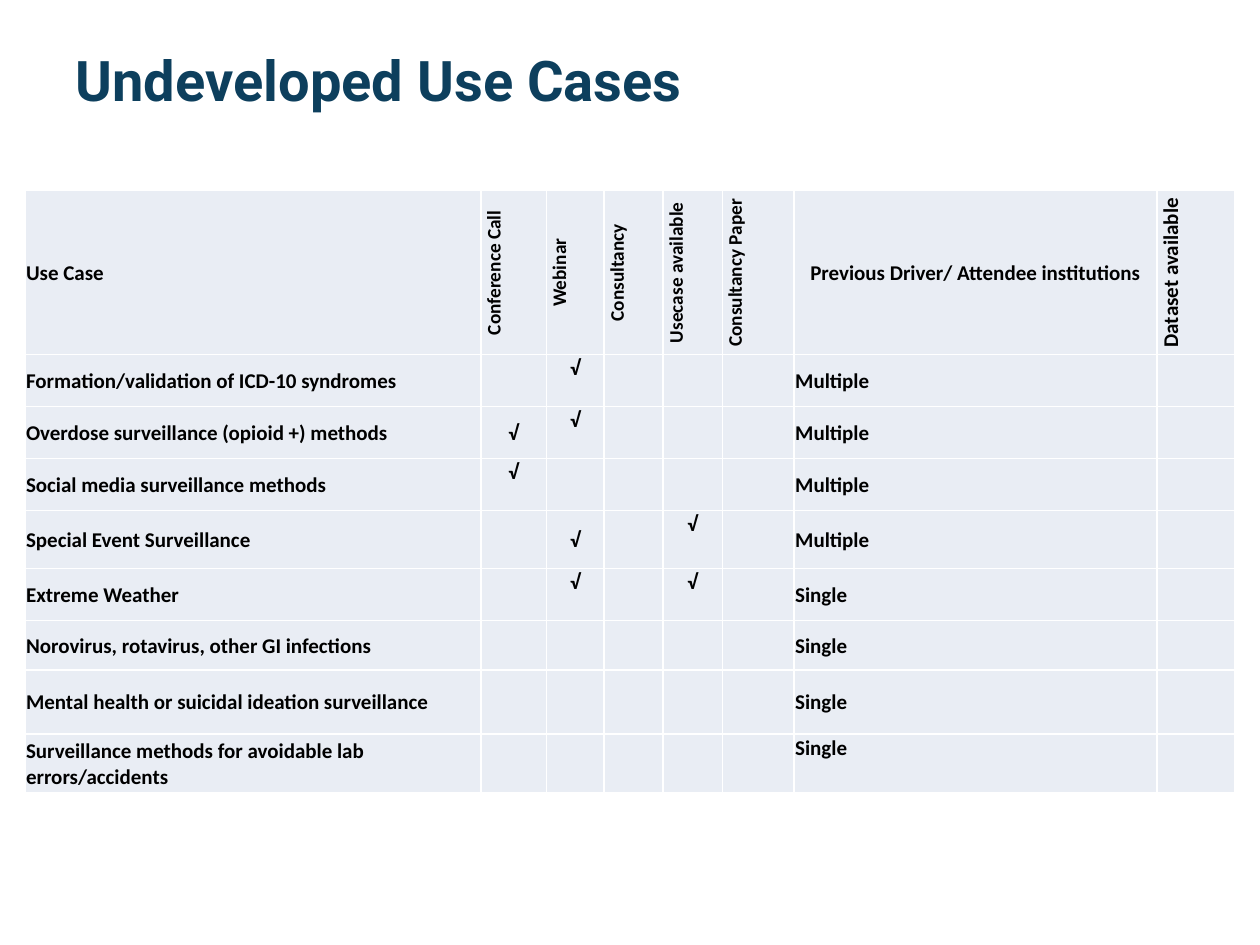
from lxml.etree import SubElement as Sub
from pptx import Presentation
from pptx.dml.color import RGBColor as RGB
from pptx.enum.text import MSO_ANCHOR as Anchor, PP_ALIGN as Align
from pptx.oxml.ns import qn
from pptx.util import Pt

HUES = {"title": "0D3F5D", "text": "000000", "cell": "E9EDF4", "edge": "FFFFFF"}
WIDTHS = [260.6, 37.4, 33.1, 33.7, 33.8, 41, 207.4, 44.6]
HEIGHTS = [93.7, 29.7, 29.7, 29.7, 33.1, 29.7, 28.5, 36.6, 33.7]
HEADS = ["Use Case", "Conference Call", "Webinar", "Consultancy", "Usecase available",
         "Consultancy Paper", "Previous Driver/ Attendee institutions", "Dataset available"]
CASES = [
    ("Formation/validation of ICD-10 syndromes", [2], "Multiple"),
    ("Overdose surveillance (opioid +) methods", [1, 2], "Multiple"),
    ("Social media surveillance methods", [1], "Multiple"),
    ("Special Event Surveillance", [2, 4], "Multiple"),
    ("Extreme Weather", [2, 4], "Single"),
    ("Norovirus, rotavirus, other GI infections", [], "Single"),
    ("Mental health or suicidal ideation surveillance", [], "Single"),
    ("Surveillance methods for avoidable lab errors/accidents", [], "Single"),
]
HIGH = {(1, 2), (2, 2), (3, 1), (4, 4), (5, 2), (5, 4), (8, 6)}


def write(para, text, face, size, hue):
    run = para.add_run()
    run.text = text
    run.font.name = face
    run.font.size = Pt(size)
    run.font.bold = True
    run.font.color.rgb = RGB.from_string(HUES[hue])


def dress(cell):
    props = cell._tc.get_or_add_tcPr()
    for side in ("lnL", "lnR", "lnT", "lnB"):
        line = Sub(props, qn(f"a:{side}"), w=str(Pt(1)))
        fill = Sub(line, qn("a:solidFill"))
        Sub(fill, qn("a:srgbClr"), val=HUES["edge"])
    cell.fill.solid()
    cell.fill.fore_color.rgb = RGB.from_string(HUES["cell"])
    cell.margin_left = cell.margin_right = cell.margin_top = Pt(0.7)
    cell.margin_bottom = Pt(0)
    cell.vertical_anchor = Anchor.MIDDLE


deck = Presentation()
deck.slide_width, deck.slide_height = Pt(720), Pt(540)
slide = deck.slides.add_slide(deck.slide_layouts[5])

title = slide.shapes.title
title.left, title.top, title.width, title.height = Pt(36), Pt(0), Pt(524), Pt(90)
title.text_frame.vertical_anchor = Anchor.MIDDLE
para = title.text_frame.paragraphs[0]
para.alignment = Align.LEFT
write(para, "Undeveloped Use Cases", "Roboto", 32, "title")

grid = [HEADS]
for case, ticks, source in CASES:
    marks = ["√" if col in ticks else "" for col in range(1, 6)]
    grid.append([case, *marks, source, ""])

table = slide.shapes.add_table(len(grid), len(HEADS), Pt(14.2), Pt(109),
                               Pt(sum(WIDTHS)), Pt(sum(HEIGHTS))).table
for col, width in zip(table.columns, WIDTHS):
    col.width = Pt(width)
for row, height in zip(table.rows, HEIGHTS):
    row.height = Pt(height)

for r, texts in enumerate(grid):
    for c, text in enumerate(texts):
        cell = table.cell(r, c)
        dress(cell)
        para = cell.text_frame.paragraphs[0]
        if not text:
            para.font.size = Pt(12)
            continue
        upright = r == 0 and c not in (0, 6)
        if upright:
            cell._tc.tcPr.set("vert", "vert270")
        if upright or (r, c) in HIGH:
            cell.vertical_anchor = Anchor.TOP
        left = c == 0 or (c == 6 and r > 0)
        para.alignment = Align.LEFT if left else Align.CENTER
        write(para, text, "Calibri", 11 if upright and c < 6 else 12, "text")

deck.save("out.pptx")
